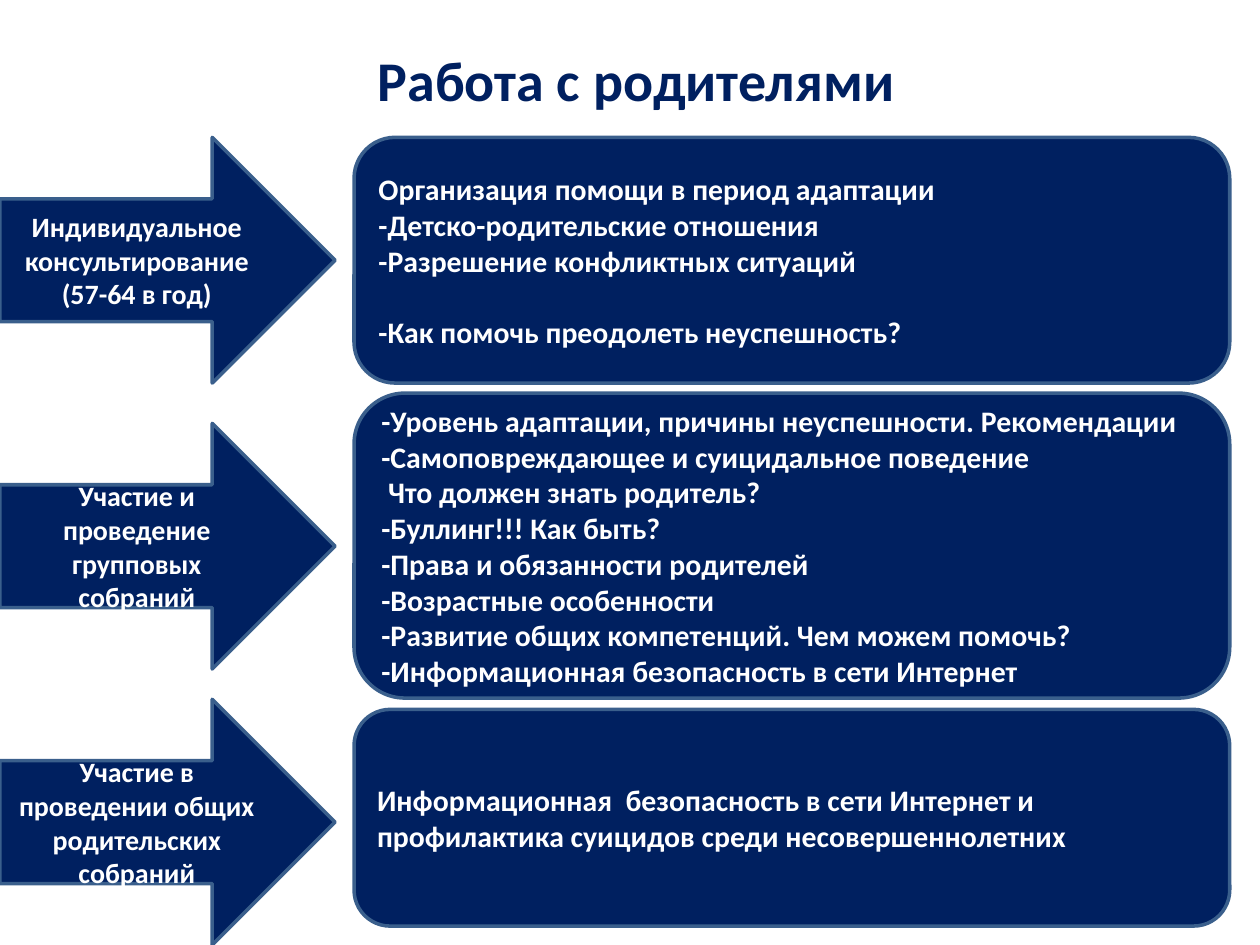
from pptx import Presentation
from pptx import util as u
from pptx.dml import color
from pptx.enum import shapes, text

COLORS = {"navy": "002060", "outline": "3A5F8C", "white": "FFFFFF"}
FONT = "Calibri"
ARROW_SIZE = (2.66, 1.95)
BOX_LEFT, BOX_WIDTH = 2.81, 6.95
BLANK_LINE = 20.4

ROWS = [
    {
        "arrow_top": 1.09,
        "arrow": ["Индивидуальное консультирование", "(57-64 в год)"],
        "box_top": 1.09,
        "box_height": 1.95,
        "box": [
            "Организация помощи в период адаптации",
            "-Детско-родительские отношения",
            "-Разрешение конфликтных ситуаций",
            "-Как помочь преодолеть неуспешность?",
        ],
        "gap_before": 3,
    },
    {
        "arrow_top": 3.36,
        "arrow": ["Участие и проведение групповых собраний"],
        "box_top": 3.12,
        "box_height": 2.42,
        "box": [
            "-Уровень адаптации, причины неуспешности. Рекомендации",
            "-Самоповреждающее и суицидальное поведение",
            " Что должен знать родитель?",
            "-Буллинг!!! Как быть?",
            "-Права и обязанности родителей",
            "-Возрастные особенности",
            "-Развитие общих компетенций. Чем можем помочь?",
            "-Информационная безопасность в сети Интернет",
        ],
    },
    {
        "arrow_top": 5.55,
        "arrow": ["Участие в проведении общих родительских собраний"],
        "box_top": 5.63,
        "box_height": 1.72,
        "box": [
            "Информационная  безопасность в сети Интернет и "
            "профилактика суицидов среди несовершеннолетних"
        ],
    },
]


def rgb(name):
    return color.RGBColor.from_string(COLORS[name])


def write_text(tf, lines, size, color_name, align):
    tf.text = "\n".join(lines)
    tf.word_wrap = True
    tf.vertical_anchor = text.MSO_ANCHOR.MIDDLE
    for p in tf.paragraphs:
        p.alignment = align
        for r in p.runs:
            r.font.name = FONT
            r.font.size = u.Pt(size)
            r.font.bold = True
            r.font.color.rgb = rgb(color_name)


def add_title(s, title):
    sp = s.shapes.title
    sp.left, sp.top = u.Inches(0.55), u.Inches(0)
    sp.width, sp.height = u.Inches(9), u.Inches(1.25)
    write_text(sp.text_frame, [title], 32, "navy", text.PP_ALIGN.CENTER)


def add_panel(s, kind, left, top, width, height):
    sp = s.shapes.add_shape(
        kind, u.Inches(left), u.Inches(top), u.Inches(width), u.Inches(height)
    )
    sp.shadow.inherit = False
    sp.fill.solid()
    sp.fill.fore_color.rgb = rgb("navy")
    sp.line.color.rgb = rgb("outline")
    sp.line.width = u.Pt(2)
    return sp


def add_arrow(s, row):
    sp = add_panel(
        s, shapes.MSO_SHAPE.RIGHT_ARROW, 0, row["arrow_top"], *ARROW_SIZE
    )
    write_text(sp.text_frame, row["arrow"], 16, "white", text.PP_ALIGN.CENTER)


def add_box(s, row):
    sp = add_panel(
        s, shapes.MSO_SHAPE.ROUNDED_RECTANGLE,
        BOX_LEFT, row["box_top"], BOX_WIDTH, row["box_height"],
    )
    tf = sp.text_frame
    write_text(tf, row["box"], 17, "white", text.PP_ALIGN.LEFT)
    if "gap_before" in row:
        tf.paragraphs[row["gap_before"]].space_before = u.Pt(BLANK_LINE)


def main():
    prs = Presentation()
    prs.slide_width, prs.slide_height = u.Inches(10), u.Inches(7.5)
    s = prs.slides.add_slide(prs.slide_layouts[5])
    add_title(s, "Работа с родителями")
    for row in ROWS:
        add_box(s, row)
        add_arrow(s, row)
    prs.save("out.pptx")


if __name__ == "__main__":
    main()
